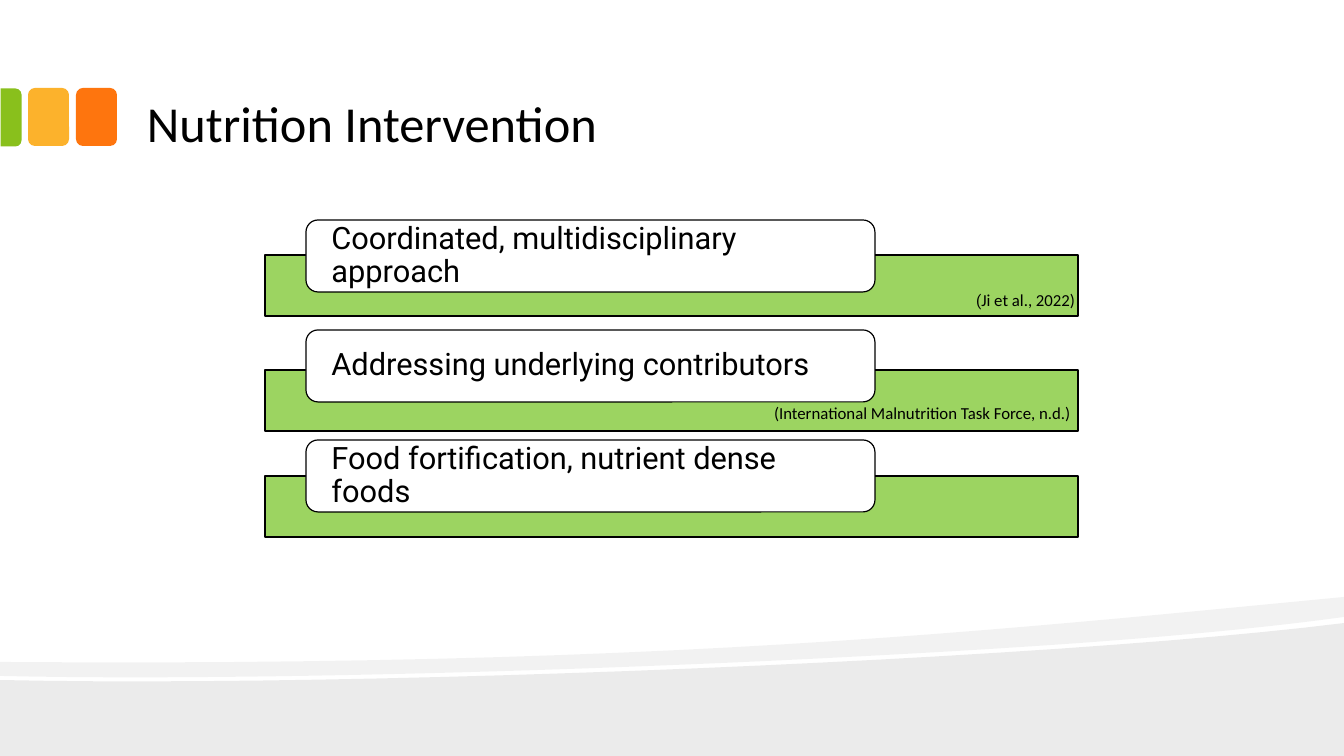
import pptx
import pptx.util
import pptx.dml.color
import pptx.enum.shapes
import pptx.enum.text
import pptx.oxml.ns
import lxml.etree

PX = 914400 / 100.8
SHAPE = pptx.enum.shapes.MSO_SHAPE
ANCHOR = pptx.enum.text.MSO_ANCHOR


def paint(shape, colour, opacity=100, outlined=False):
    """Fill a shape, with a thin black outline or none, and drop its shadow."""
    shape.shadow.inherit = False
    shape.fill.solid()
    shape.fill.fore_color.rgb = pptx.dml.color.RGBColor.from_string(colour)
    if opacity < 100:
        tag = pptx.oxml.ns.qn("a:srgbClr")
        alpha = lxml.etree.SubElement(
            next(shape.fill._xPr.iter(tag)), pptx.oxml.ns.qn("a:alpha"))
        alpha.set("val", str(opacity * 1000))
    if outlined:
        shape.line.color.rgb = pptx.dml.color.RGBColor.from_string("000000")
        shape.line.width = pptx.util.Pt(0.85)
    else:
        shape.line.fill.background()


def write(shape, spans, anchor, margins, spacing=1.0):
    """Put one left-aligned black paragraph of (text, font, size) spans in a shape."""
    frame = shape.text_frame
    across, down = (round(margin * PX) for margin in margins)
    settings = {"word_wrap": True, "vertical_anchor": anchor,
                "margin_left": across, "margin_right": across,
                "margin_top": down, "margin_bottom": down}
    for name, value in settings.items():
        setattr(frame, name, value)
    para = frame.paragraphs[0]
    para.alignment = pptx.enum.text.PP_ALIGN.LEFT
    para.line_spacing = spacing
    for text, font, size in spans:
        span = para.add_run()
        span.text = text
        span.font.name = font
        span.font.size = pptx.util.Pt(size)
        span.font.color.rgb = pptx.dml.color.RGBColor.from_string("000000")


deck = pptx.Presentation()
deck.slide_width = round(1344 * PX)
deck.slide_height = round(756 * PX)
page = deck.slides.add_slide(deck.slide_layouts[6])

# Waves along the foot: each edge is a chain of points and cubic curves
STEPS = 24
waves = [
    (8, [[(0, 680), (355, 688), (1050, 660), (1344, 623)],
         [(1344, 756)], [(0, 756)]]),
    (5, [[(0, 662), (657, 667), (979, 632), (1344, 597)],
         [(1344, 617), (1265, 628), (1157, 638), (1037, 646)],
         [(1037, 646), (704, 668), (260, 682), (0, 676)]]),
]
for opacity, edges in waves:
    points = []
    for edge in edges:
        if len(edge) == 1:
            points += edge
            continue
        for step in range(STEPS + 1):
            t = step / STEPS
            weights = ((1 - t) ** 3, 3 * t * (1 - t) ** 2, 3 * t * t * (1 - t), t ** 3)
            points.append(tuple(sum(weight * point[axis] for weight, point in zip(weights, edge))
                                for axis in (0, 1)))
    outline = page.shapes.build_freeform(
        round(points[0][0] * PX), round(points[0][1] * PX), scale=1.0)
    outline.add_line_segments([(round(x * PX), round(y * PX)) for x, y in points[1:]], close=True)
    paint(outline.convert_to_shape(), "000000", opacity)

# Colour tiles beside the title; the green one is cut off by the slide edge
for left, colour in ((76, "FE750E"), (28, "FCB22C")):
    tile = page.shapes.add_shape(SHAPE.ROUNDED_RECTANGLE,
                                 *(round(n * PX) for n in (left, 88, 41, 58)))
    paint(tile, colour)
edge_tile = page.shapes.add_shape(SHAPE.ROUND_2_SAME_RECTANGLE,
                                  *(round(n * PX) for n in (-18, 107, 58, 21)))
edge_tile.rotation = 90
edge_tile.adjustments[0] = 0.29
edge_tile.adjustments[1] = 0
paint(edge_tile, "89C01C")

title = page.shapes.add_textbox(*(round(n * PX) for n in (134, 17, 1075, 143)))
write(title, [("Nutrition Intervention", "Calibri", 36)], ANCHOR.BOTTOM, (13, 7))

# Interventions: a green bar with a white label over it
interventions = [
    (255, "Coordinated, multidisciplinary approach"),
    (370, "Addressing underlying contributors"),
    (476, "Food fortification, nutrient dense foods"),
]
for row, (bar_top, text) in enumerate(interventions):
    bar = page.shapes.add_shape(SHAPE.RECTANGLE,
                                *(round(n * PX) for n in (265, bar_top, 813, 61)))
    paint(bar, "92D050", 90, outlined=True)
    label = page.shapes.add_shape(SHAPE.ROUNDED_RECTANGLE,
                                  *(round(n * PX) for n in (306, 220 + 110 * row, 569, 72)))
    paint(label, "FFFFFF", outlined=True)
    write(label, [(text, "Roboto", 22)], ANCHOR.MIDDLE, (22, 0), 0.9)

citations = [
    (966, 285, 173, [("(", "Roboto", 11), ("Ji et al., 2022)", "Calibri", 12)]),
    (764, 398, 505, [("(International Malnutrition Task Force, n.d.)", "Calibri", 12)]),
]
for left, top, width, spans in citations:
    citation = page.shapes.add_textbox(*(round(n * PX) for n in (left, top, width, 30)))
    write(citation, spans, ANCHOR.TOP, (10, 5))

deck.save("out.pptx")
